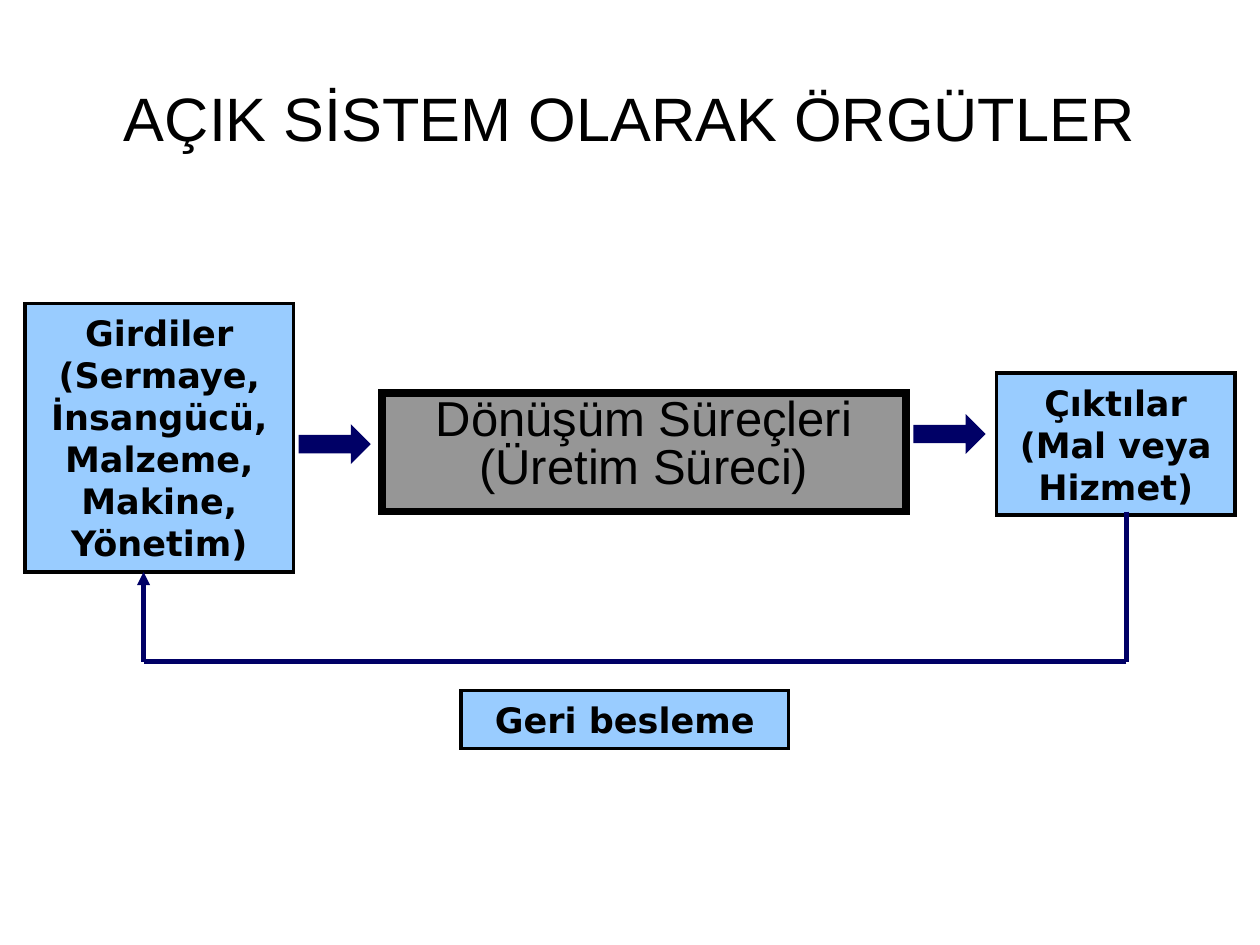
from dataclasses import dataclass

import lxml.etree
import pptx
import pptx.dml.color
import pptx.enum.shapes
import pptx.enum.text
import pptx.oxml
import pptx.oxml.ns
import pptx.util

Inches = pptx.util.Inches
SHAPE = pptx.enum.shapes.MSO_SHAPE
ANCHOR = pptx.enum.text.MSO_ANCHOR

COLORS = {"ink": "000000", "box": "99CCFF", "process": "969696", "flow": "000066"}


@dataclass
class Box:
    text: str
    left: float
    top: float
    width: float
    height: float
    fill: str = "box"
    border: float = 2
    font: str = "DejaVu Sans"
    size: float = 20
    bold: bool = True
    spacing: float = 1.0
    anchor: ANCHOR = ANCHOR.MIDDLE


@dataclass
class FlowArrow:
    left: float
    top: float
    width: float = 0.5
    height: float = 0.17


def rgb(name: str) -> pptx.dml.color.RGBColor:
    return pptx.dml.color.RGBColor.from_string(COLORS[name])


def add_child(parent, tag: str, **attributes: str) -> None:
    child = lxml.etree.SubElement(parent, pptx.oxml.ns.qn(tag))
    for key, value in attributes.items():
        child.set(key, value)


def paint(shape, fill: str, line: str, width: float) -> None:
    shape.shadow.inherit = False
    shape.fill.solid()
    shape.fill.fore_color.rgb = rgb(fill)
    shape.line.color.rgb = rgb(line)
    shape.line.width = pptx.util.Pt(width)
    add_child(shape.line._get_or_add_ln(), "a:miter", lim="800000")


def write(shape, text: str, font: str, size: float, bold: bool = False,
          spacing: float = 1.0, anchor: ANCHOR = ANCHOR.MIDDLE) -> None:
    frame = shape.text_frame
    frame.word_wrap = True
    frame.vertical_anchor = anchor
    frame.text = text
    for paragraph in frame.paragraphs:
        paragraph.alignment = pptx.enum.text.PP_ALIGN.CENTER
        paragraph.line_spacing = spacing
        for run in paragraph.runs:
            run.font.name = font
            run.font.size = pptx.util.Pt(size)
            run.font.bold = bold
            run.font.color.rgb = rgb("ink")


def draw_box(slide, box: Box) -> None:
    shape = slide.shapes.add_shape(
        SHAPE.RECTANGLE, Inches(box.left), Inches(box.top),
        Inches(box.width), Inches(box.height))
    paint(shape, box.fill, "ink", box.border)
    write(shape, box.text, box.font, box.size, box.bold, box.spacing, box.anchor)


def draw_arrow(slide, arrow: FlowArrow) -> None:
    shape = slide.shapes.add_shape(
        SHAPE.RIGHT_ARROW, Inches(arrow.left), Inches(arrow.top),
        Inches(arrow.width), Inches(arrow.height))
    paint(shape, "flow", "flow", 4.33)


def draw_line(slide, start: tuple[float, float], end: tuple[float, float],
              arrowhead: bool) -> None:
    line = slide.shapes.add_connector(
        pptx.enum.shapes.MSO_CONNECTOR.STRAIGHT,
        Inches(start[0]), Inches(start[1]), Inches(end[0]), Inches(end[1]))
    line.line.color.rgb = rgb("flow")
    line.line.width = pptx.util.Pt(2.5)
    if arrowhead:
        add_child(line.line._get_or_add_ln(), "a:tailEnd", type="triangle")
    add_child(line._element.spPr, "a:effectLst")


BOXES = [
    Box("Dönüşüm Süreçleri\n(Üretim Süreci)", 3.03, 3.12, 4.16, 0.94,
        fill="process", border=4.33, font="Arial", size=28, bold=False,
        spacing=0.8, anchor=ANCHOR.TOP),
    Box("Çıktılar (Mal veya Hizmet)", 7.91, 2.96, 1.89, 1.13),
    Box("Girdiler (Sermaye, İnsangücü, Malzeme, Makine, Yönetim)",
        0.2, 2.41, 2.13, 2.13),
    Box("Geri besleme", 3.66, 5.48, 2.6, 0.46),
]
ARROWS = [FlowArrow(2.4, 3.44), FlowArrow(7.28, 3.36)]
# Feedback path from outputs back to inputs
FEEDBACK = [(8.94, 4.06), (8.94, 5.25), (1.14, 5.25), (1.14, 4.54)]


def main() -> None:
    deck = pptx.Presentation()
    deck.slide_width, deck.slide_height = Inches(10), Inches(7.5)
    slide = deck.slides.add_slide(deck.slide_layouts[6])

    # Title
    title = slide.shapes.add_textbox(Inches(0.5), Inches(0.3), Inches(9), Inches(1.25))
    write(title, "AÇIK SİSTEM OLARAK ÖRGÜTLER", "Arial", 35)

    # Inputs, process, outputs and the arrows between them
    for box in BOXES:
        draw_box(slide, box)
    for arrow in ARROWS:
        draw_arrow(slide, arrow)

    # Feedback loop, with an arrowhead on its last leg
    for start, end in zip(FEEDBACK, FEEDBACK[1:]):
        draw_line(slide, start, end, arrowhead=end == FEEDBACK[-1])

    deck.save("out.pptx")


if __name__ == "__main__":
    main()
